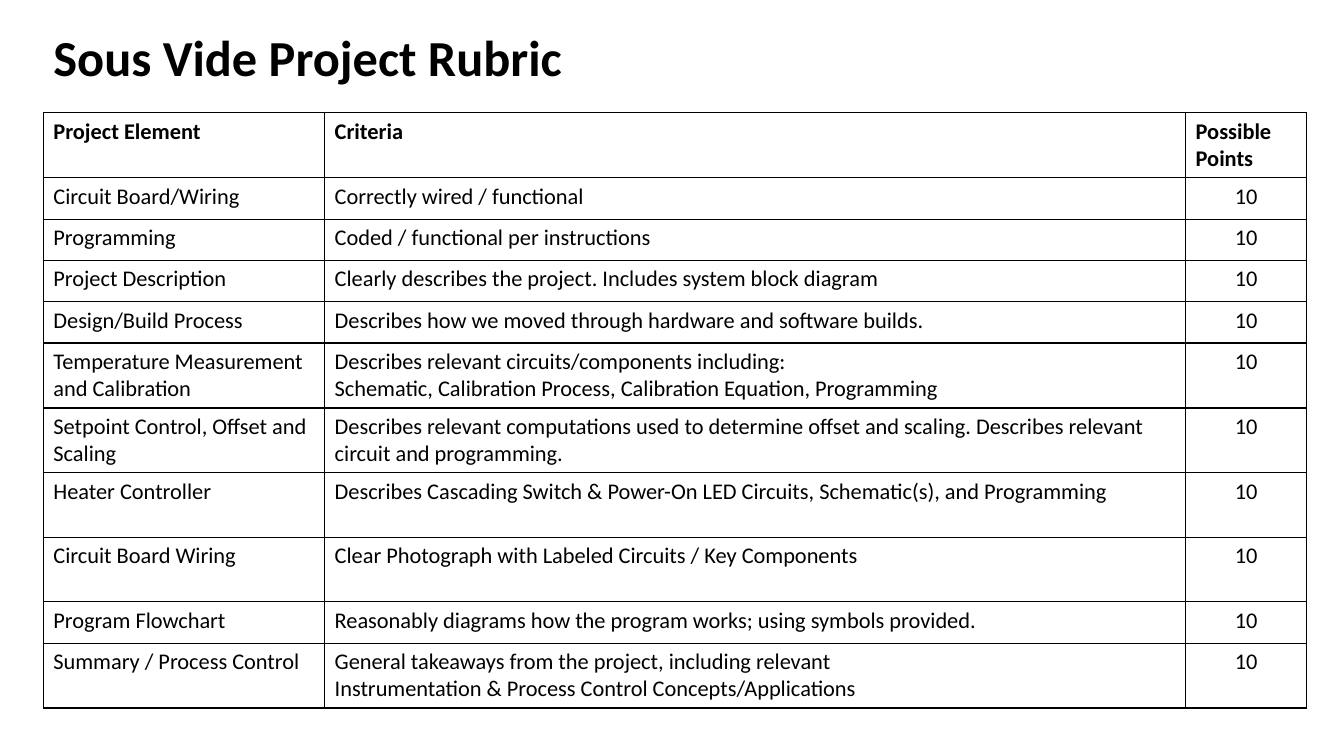
from dataclasses import dataclass

from lxml import etree
from pptx import Presentation
from pptx.dml.color import RGBColor
from pptx.enum.text import MSO_ANCHOR, PP_ALIGN
from pptx.oxml.ns import qn
from pptx.util import Pt

LEFT, CENTER = PP_ALIGN.LEFT, PP_ALIGN.CENTER
TOP, MIDDLE = MSO_ANCHOR.TOP, MSO_ANCHOR.MIDDLE
EMU_PER_PX = 9144
TITLE_ONLY = 5
PAGE_SIZE = (1333, 750)
TITLE_BOX = (43, 22, 1252, 75)
TABLE_ORIGIN = (43, 112)
COLUMN_WIDTHS = (279, 854, 120)
SHORT_ROW, TALL_ROW = 41, 64

TITLE = "Sous Vide Project Rubric"
HEADER = ("Project Element", "Criteria", "Possible Points")
POINTS = "10"
RUBRIC = [
    ("Circuit Board/Wiring", "Correctly wired / functional", SHORT_ROW),
    ("Programming", "Coded / functional per instructions", SHORT_ROW),
    ("Project Description",
     "Clearly describes the project. Includes system block diagram", SHORT_ROW),
    ("Design/Build Process",
     "Describes how we moved through hardware and software builds.", SHORT_ROW),
    ("Temperature Measurement and Calibration",
     "Describes relevant circuits/components including:\n"
     "Schematic, Calibration Process, Calibration Equation, Programming", TALL_ROW),
    ("Setpoint Control, Offset and Scaling",
     "Describes relevant computations used to determine offset and scaling. "
     "Describes relevant circuit and programming.", TALL_ROW),
    ("Heater Controller",
     "Describes Cascading Switch & Power-On LED Circuits, Schematic(s), and Programming",
     TALL_ROW),
    ("Circuit Board Wiring", "Clear Photograph with Labeled Circuits / Key Components",
     TALL_ROW),
    ("Program Flowchart",
     "Reasonably diagrams how the program works; using symbols provided.", SHORT_ROW),
    ("Summary / Process Control",
     "General takeaways from the project, including relevant\n"
     "Instrumentation & Process Control Concepts/Applications", TALL_ROW),
]


@dataclass(frozen=True)
class Theme:
    """Colours, font and type sizes of the slide."""
    font: str = "Calibri"
    ink: str = "000000"
    paper: str = "FFFFFF"
    title_size: int = 36
    body_size: int = 16
    border_width: int = 1


def px(length):
    """Turn pixels into EMU."""
    return length * EMU_PER_PX


def write_text(frame, text, *, font, size, color, bold=False, align=LEFT, spacing=1.0):
    """Fill a text frame with one paragraph per line of text."""
    frame.word_wrap = True
    for index, line in enumerate(text.split("\n")):
        para = frame.add_paragraph() if index else frame.paragraphs[0]
        para.alignment = align
        para.line_spacing = spacing
        span = para.add_run()
        span.text = line
        span.font.name = font
        span.font.size = Pt(size)
        span.font.bold = bold
        span.font.color.rgb = RGBColor.from_string(color)


class RubricPage:
    """Draws titles and ruled tables on one page in one theme."""

    def __init__(self, page, theme):
        """Keep the page and its theme."""
        self.page = page
        self.theme = theme

    def title(self, text, bounds):
        """Place and format the title placeholder."""
        box = self.page.shapes.title
        box.left, box.top, box.width, box.height = map(px, bounds)
        box.text_frame.vertical_anchor = MIDDLE
        write_text(box.text_frame, text, font=self.theme.font, size=self.theme.title_size,
                   color=self.theme.ink, bold=True, spacing=0.9)

    def border(self, cell):
        """Rule all four sides of a cell."""
        properties = cell._tc.get_or_add_tcPr()
        for side in ("a:lnL", "a:lnR", "a:lnT", "a:lnB"):
            line = etree.SubElement(properties, qn(side), w=str(Pt(self.theme.border_width)))
            fill = etree.SubElement(line, qn("a:solidFill"))
            etree.SubElement(fill, qn("a:srgbClr"), val=self.theme.ink)

    def cell(self, cell, text, **text_format):
        """Rule, fill and write one table cell."""
        self.border(cell)
        cell.fill.solid()
        cell.fill.fore_color.rgb = RGBColor.from_string(self.theme.paper)
        cell.vertical_anchor = TOP
        write_text(cell.text_frame, text, font=self.theme.font, size=self.theme.body_size,
                   color=self.theme.ink, **text_format)

    def table(self, rows, origin, widths, heights):
        """Add a table with a bold first row and a centred last column."""
        left, top = origin
        frame = self.page.shapes.add_table(len(rows), len(widths), px(left), px(top),
                                           px(sum(widths)), px(sum(heights)))
        table = frame.table
        table.horz_banding = False
        for column, width in zip(table.columns, widths):
            column.width = px(width)
        for row, height in zip(table.rows, heights):
            row.height = px(height)
        for row_index, row in enumerate(rows):
            for column_index, text in enumerate(row):
                is_header = row_index == 0
                is_points = column_index == len(widths) - 1
                self.cell(table.cell(row_index, column_index), text, bold=is_header,
                          align=CENTER if is_points and not is_header else LEFT)


def main():
    """Build the rubric slide and save it."""
    deck = Presentation()
    deck.slide_width, deck.slide_height = map(px, PAGE_SIZE)
    page = deck.slides.add_slide(deck.slide_layouts[TITLE_ONLY])
    rubric = RubricPage(page, Theme())
    rubric.title(TITLE, TITLE_BOX)
    rows = [HEADER] + [(element, criteria, POINTS) for element, criteria, _ in RUBRIC]
    heights = [TALL_ROW] + [height for _, _, height in RUBRIC]
    rubric.table(rows, TABLE_ORIGIN, COLUMN_WIDTHS, heights)
    deck.save("out.pptx")


if __name__ == "__main__":
    main()
